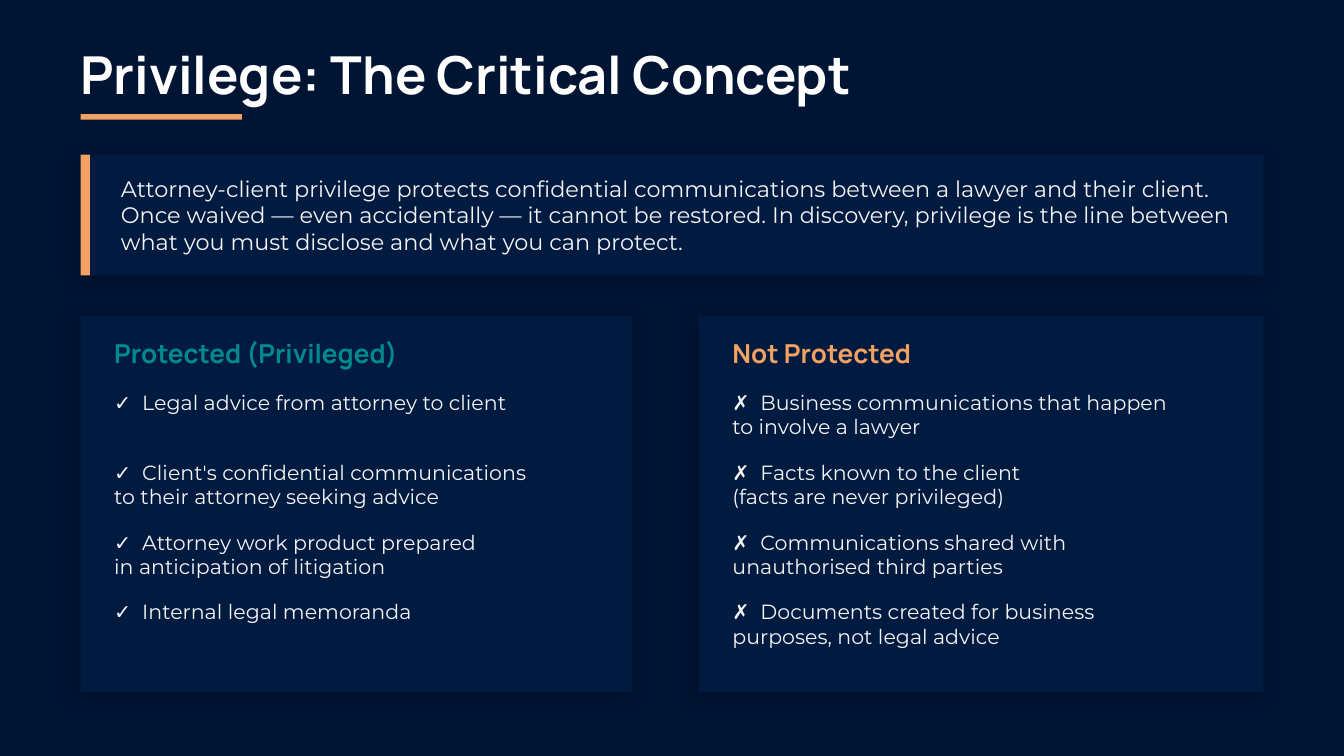
import pptx
import pptx.dml.color
import pptx.enum.shapes
import pptx.enum.text
import pptx.oxml
import pptx.oxml.ns
import pptx.util
from dataclasses import dataclass

Pt = pptx.util.Pt
Align = pptx.enum.text.PP_ALIGN
Anchor = pptx.enum.text.MSO_ANCHOR


@dataclass(frozen=True)
class Theme:
    background: str = "001434"
    panel: str = "001A40"
    orange: str = "F4A261"
    teal: str = "008B8B"
    white: str = "FFFFFF"
    body: str = "F4F4F4"
    heading_font: str = "Manrope"
    body_font: str = "Montserrat"
    title_size: int = 28
    heading_size: int = 14
    intro_size: int = 12
    item_size: int = 11


THEME = Theme()
LEFT = 43.2
CONTENT_WIDTH = 633.6
INTRO_TOP, INTRO_HEIGHT = 82.8, 64.8
COLUMN_TOP, COLUMN_HEIGHT = 169.2, 201.6
COLUMN_PADDING = 18
ITEM_TOP, ITEM_HEIGHT, ITEM_STEP = 208.8, 34.56, 37.44
MARK_TAB = 15

INTRO = (
    "Attorney-client privilege protects confidential communications between "
    "a lawyer and their client. Once waived — even accidentally — it cannot "
    "be restored. In discovery, privilege is the line between what you must "
    "disclose and what you can protect."
)

# Heading, mark, heading colour, left, width, items (one tuple of lines each)
COLUMNS = [
    ("Protected (Privileged)", "✓", THEME.teal, LEFT, 295.2, [
        ("Legal advice from attorney to client",),
        ("Client's confidential communications", "to their attorney seeking advice"),
        ("Attorney work product prepared", "in anticipation of litigation"),
        ("Internal legal memoranda",),
    ]),
    ("Not Protected", "✗", THEME.orange, 374.4, 302.4, [
        ("Business communications that happen", "to involve a lawyer"),
        ("Facts known to the client", "(facts are never privileged)"),
        ("Communications shared with", "unauthorised third parties"),
        ("Documents created for business", "purposes, not legal advice"),
    ]),
]


def rgb(color):
    return pptx.dml.color.RGBColor.from_string(color)


def place(shape, left, top, width, height):
    shape.left, shape.top = Pt(left), Pt(top)
    shape.width, shape.height = Pt(width), Pt(height)


def write(shape, lines, *, size, font=THEME.body_font, color=THEME.body,
          bold=False, anchor=Anchor.TOP, tab=None):
    """Write one paragraph per line, without margins."""
    frame = shape.text_frame
    frame.word_wrap = True
    frame.auto_size = pptx.enum.text.MSO_AUTO_SIZE.NONE
    frame.vertical_anchor = anchor
    frame.margin_left = frame.margin_right = 0
    frame.margin_top = frame.margin_bottom = 0
    for index, line in enumerate(lines):
        paragraph = frame.add_paragraph() if index else frame.paragraphs[0]
        if tab and "\t" in line:
            add_tab_stop(paragraph, tab)
        paragraph.alignment = Align.LEFT
        run = paragraph.add_run()
        run.text = line
        run.font.name = font
        run.font.size = Pt(size)
        run.font.bold = bold
        run.font.color.rgb = rgb(color)


def add_tab_stop(paragraph, position):
    properties = paragraph._p.get_or_add_pPr()
    properties.append(pptx.oxml.parse_xml(
        f'<a:tabLst {pptx.oxml.ns.nsdecls("a")}>'
        f'<a:tab pos="{Pt(position)}" algn="l"/></a:tabLst>'))


def add_text(slide, box, lines, **style):
    left, top, width, height = box
    textbox = slide.shapes.add_textbox(Pt(left), Pt(top), Pt(width), Pt(height))
    write(textbox, lines, **style)


def add_bar(slide, box, color):
    bar = slide.shapes.add_shape(
        pptx.enum.shapes.MSO_SHAPE.RECTANGLE, *(Pt(length) for length in box))
    bar.shadow.inherit = False
    bar.fill.solid()
    bar.fill.fore_color.rgb = rgb(color)
    bar.line.fill.background()
    return bar


def add_panel(slide, box):
    """Add a dark panel with a soft shadow."""
    panel = add_bar(slide, box, THEME.panel)
    effects = panel._element.spPr.find(pptx.oxml.ns.qn("a:effectLst"))
    effects.append(pptx.oxml.parse_xml(
        f'<a:outerShdw {pptx.oxml.ns.nsdecls("a")} blurRad="{Pt(8)}" '
        f'dist="{Pt(3)}" dir="{135 * 60000}" algn="bl" rotWithShape="0">'
        '<a:srgbClr val="000000"><a:alpha val="18000"/></a:srgbClr>'
        '</a:outerShdw>'))


def add_title(slide, text):
    title = slide.shapes.title
    place(title, LEFT, 21.6, 576, 36)
    write(title, [text], size=THEME.title_size, font=THEME.heading_font,
          color=THEME.white, bold=True, anchor=Anchor.MIDDLE)
    add_bar(slide, (LEFT, 61.2, 86.4, 2.88), THEME.orange)


def add_intro(slide):
    add_panel(slide, (LEFT, INTRO_TOP, CONTENT_WIDTH, INTRO_HEIGHT))
    add_bar(slide, (LEFT, INTRO_TOP, 5.04, INTRO_HEIGHT), THEME.orange)
    add_text(slide, (64.8, INTRO_TOP, 597.6, INTRO_HEIGHT), [INTRO],
             size=THEME.intro_size, anchor=Anchor.MIDDLE)


def add_column(slide, heading, mark, color, left, width, items):
    add_panel(slide, (left, COLUMN_TOP, width, COLUMN_HEIGHT))
    text_left = left + COLUMN_PADDING
    text_width = width - 2 * COLUMN_PADDING
    add_text(slide, (text_left, 176.4, text_width, 25.2), [heading],
             size=THEME.heading_size, font=THEME.heading_font, color=color,
             bold=True, anchor=Anchor.MIDDLE)
    for row, (first, *rest) in enumerate(items):
        box = (text_left, ITEM_TOP + row * ITEM_STEP, text_width, ITEM_HEIGHT)
        add_text(slide, box, [f"{mark}\t{first}", *rest],
                 size=THEME.item_size, tab=MARK_TAB)


def main():
    deck = pptx.Presentation()
    deck.slide_width, deck.slide_height = Pt(720), Pt(405)
    slide = deck.slides.add_slide(deck.slide_layouts[5])
    slide.background.fill.solid()
    slide.background.fill.fore_color.rgb = rgb(THEME.background)

    # Title and introduction
    add_title(slide, "Privilege: The Critical Concept")
    add_intro(slide)

    # Comparison columns
    for column in COLUMNS:
        add_column(slide, *column)

    deck.save("out.pptx")


if __name__ == "__main__":
    main()
